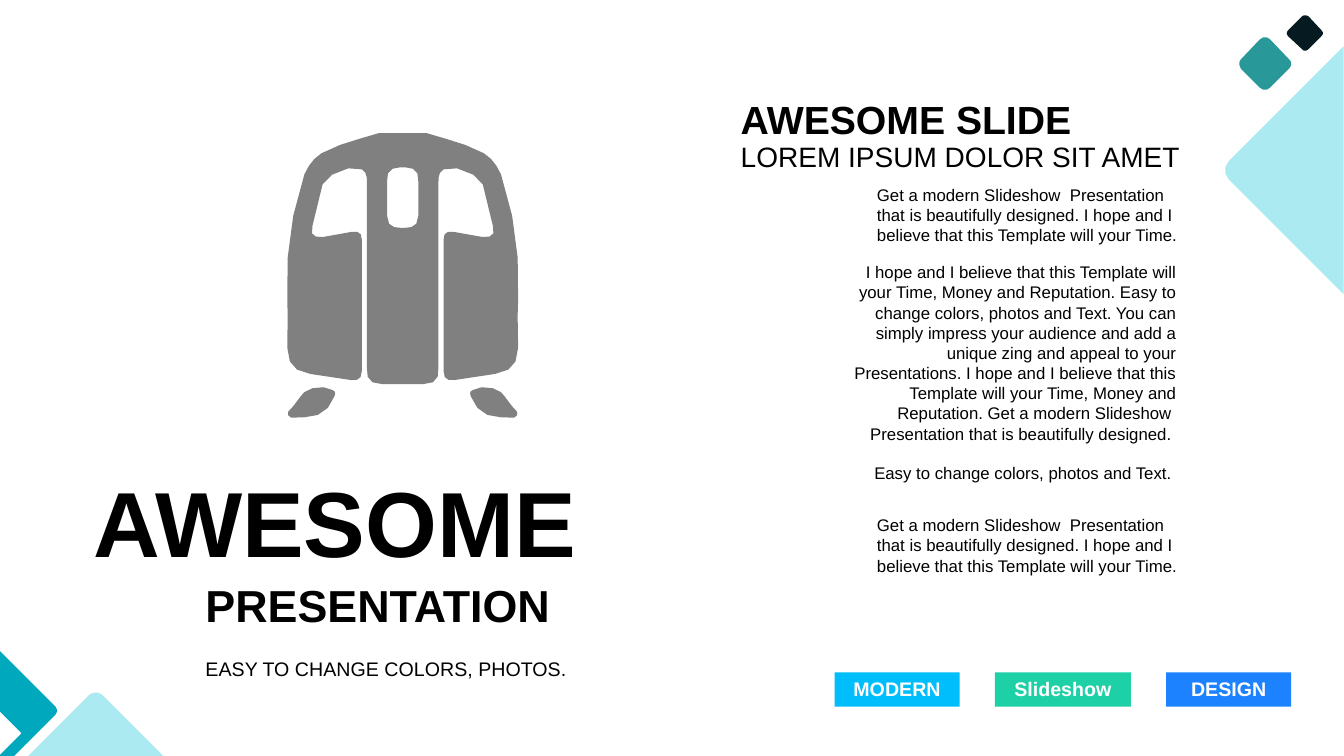
import pptx
import pptx.util
import pptx.dml.color
import pptx.enum.shapes
import pptx.enum.text

RGB = pptx.dml.color.RGBColor
ALIGN = pptx.enum.text.PP_ALIGN
ANCHOR = pptx.enum.text.MSO_ANCHOR
PX = 9144  # EMU per px, 100 px to the inch
FONT = "Arial"
BLACK, WHITE, GREY = RGB(0, 0, 0), RGB(255, 255, 255), RGB(0x80, 0x80, 0x80)
SKY, MINT, BLUE = RGB(0, 0xBD, 0xFB), RGB(0x1E, 0xD0, 0xA6), RGB(0x1C, 0x82, 0xFF)
NAVY, TEAL = RGB(0x06, 0x1A, 0x21), RGB(0x29, 0x98, 0x99)
AQUA, CYAN = RGB(0xAB, 0xEA, 0xF0), RGB(0, 0xA8, 0xBD)

# Text: box, size, bold, alignment, anchor, left inset, paragraphs
J, L, R = ALIGN.JUSTIFY, ALIGN.LEFT, ALIGN.RIGHT
MID, TOP = ANCHOR.MIDDLE, ANCHOR.TOP
INTRO = ("Get a modern Slideshow  Presentation that is beautifully designed. "
         "I hope and I believe that this Template will your Time.")
STORY = ("I hope and I believe that this Template will your Time, Money and "
         "Reputation. Easy to change colors, photos and Text. You can simply "
         "impress your audience and add a unique zing and appeal to your "
         "Presentations. I hope and I believe that this Template will your "
         "Time, Money and Reputation. Get a modern Slideshow  Presentation "
         "that is beautifully designed. ")
TEXTS = [
    ((83, 456, 687, 121), 66, True, J, MID, 10, ["AWESOME"]),
    ((194, 568, 465, 64), 32, True, J, MID, 10, ["PRESENTATION"]),
    ((194, 647, 465, 34), 14, False, J, TOP, 10, ["EASY TO CHANGE COLORS, PHOTOS."]),
    ((725, 133, 465, 44), 20, False, L, MID, 10, ["LOREM IPSUM DOLOR SIT AMET"]),
    ((725, 89, 455, 57), 28, True, J, MID, 10, ["AWESOME SLIDE"]),
    ((870, 178, 309, 71), 12, False, L, TOP, 0, [INTRO]),
    ((819, 255, 358, 232), 12, False, R, TOP, 10,
     [STORY, "Easy to change colors, photos and Text. "]),
    ((870, 506, 309, 71), 12, False, L, TOP, 0, [INTRO]),
]

# Tags: word, left, width, fill
TAGS = [("MODERN", 828, 124, SKY), ("Slideshow", 987, 135, MINT), ("DESIGN", 1157, 124, BLUE)]

# Outlines: a pair is a corner, six numbers are a curve
DECOR = [
    (NAVY, [(1311, 30), (1313, 32, 1313, 34, 1311, 36), (1298, 49),
            (1296, 51, 1293, 51, 1292, 49), (1278, 36),
            (1276, 34, 1276, 32, 1278, 30), (1292, 16),
            (1293, 15, 1296, 15, 1298, 16)]),
    (TEAL, [(1279, 59), (1260, 39), (1257, 36, 1253, 36, 1250, 39), (1231, 59),
            (1229, 61, 1229, 65, 1231, 68), (1250, 87),
            (1253, 90, 1257, 90, 1260, 87), (1279, 68),
            (1282, 65, 1282, 61, 1279, 59)]),
    (AQUA, [(1333, 46), (1333, 292), (1219, 178), (1214, 173, 1214, 165, 1219, 160)]),
    (CYAN, [(0, 646), (55, 701), (57, 703, 57, 707, 55, 709), (14, 750), (0, 750),
            (0, 749), (21, 728), (21, 727), (0, 706)]),
    (AQUA, [(95, 687), (97, 687, 99, 688, 101, 689), (162, 750), (28, 750), (89, 689),
            (91, 688, 93, 687, 95, 687)]),
]

# Train, right half only; SPAN is its left plus its right edge
SPAN = 799
BODY = [
    (423, 132), (442, 138, 462, 142, 480, 152), (488, 157, 493, 164, 497, 173),
    (511, 214, 516, 255, 514, 298), (513, 313, 514, 329, 514, 345),
    (513, 362, 508, 368, 491, 371), (451, 377),
    (444, 378, 440, 376, 440, 368), (440, 238), (440, 231, 443, 229, 450, 230),
    (478, 235), (487, 236, 492, 234, 489, 224),
    (479, 183), (476, 173, 449, 162, 440, 168),
    (435, 171, 435, 176, 435, 180), (435, 364), (436, 376, 432, 381, 420, 381)]
PANE = [(402, 166), (411, 166, 416, 170, 415, 180), (415, 214),
        (415, 225, 408, 226, 402, 226)]
FOOT = [(497, 414), (482, 414, 472, 407, 467, 393), (466, 390, 466, 388, 469, 387),
        (475, 382, 492, 384, 497, 389), (501, 393, 504, 398, 508, 403),
        (510, 406, 515, 408, 513, 412), (511, 416, 506, 414, 502, 414)]


def trace(steps, count=3):
    """Turn corners and curves into a list of points."""
    dots = []
    for step in steps:
        if len(step) == 2:
            dots.append(step)
            continue
        x, y = dots[-1]
        a, b, c, d, e, f = step
        for i in range(1, count + 1):
            t = i / count
            u = 1 - t
            k = (u ** 3, 3 * u * u * t, 3 * u * t * t, t ** 3)
            dots.append((k[0] * x + k[1] * a + k[2] * c + k[3] * e,
                         k[0] * y + k[1] * b + k[2] * d + k[3] * f))
    return dots


def flip(dots):
    return [(SPAN - x, y) for x, y in reversed(dots)]


def paint(shape, fill):
    shape.shadow.inherit = False
    shape.fill.solid()
    shape.fill.fore_color.rgb = fill
    shape.line.fill.background()


def draw(fill, *loops):
    pen = None
    for loop in loops:
        dots = [(x * PX, y * PX) for x, y in loop]
        if pen is None:
            pen = shapes.build_freeform(*dots[0], scale=1.0)
        else:
            pen.move_to(*dots[0])
        pen.add_line_segments(dots[1:], close=True)
    paint(pen.convert_to_shape(), fill)


def write(shape, lines, size, bold, color, align, anchor, inset=10):
    frame = shape.text_frame
    frame.word_wrap = True
    frame.auto_size = pptx.enum.text.MSO_AUTO_SIZE.SHAPE_TO_FIT_TEXT
    frame.vertical_anchor = anchor
    frame.margin_left = inset * PX
    for i, line in enumerate(lines):
        para = frame.add_paragraph() if i else frame.paragraphs[0]
        para.alignment = align
        if i:
            para.space_before = pptx.util.Pt(14)
        run = para.add_run()
        run.text = line
        font = run.font
        font.name, font.size, font.bold = FONT, pptx.util.Pt(size), bold
        font.color.rgb = color


deck = pptx.Presentation()
deck.slide_width, deck.slide_height = 4000 * PX // 3, 750 * PX
shapes = deck.slides.add_slide(deck.slide_layouts[6]).shapes

# Headings and body text
for box, size, bold, align, anchor, inset, lines in TEXTS:
    label = shapes.add_textbox(*(n * PX for n in box))
    write(label, lines, size, bold, BLACK, align, anchor, inset)

# Coloured tags
for word, left, width, fill in TAGS:
    tag = shapes.add_shape(pptx.enum.shapes.MSO_SHAPE.RECTANGLE,
                           left * PX, 667 * PX, width * PX, 34 * PX)
    paint(tag, fill)
    write(tag, [word], 14, True, WHITE, ALIGN.CENTER, TOP)

# Corner diamonds
for fill, steps in DECOR:
    draw(fill, trace(steps))

# Train
halves = [trace(BODY), trace(PANE)]
draw(GREY, *(half + flip(half) for half in halves))
foot = trace(FOOT)
draw(GREY, foot)
draw(GREY, flip(foot))

deck.save("out.pptx")
